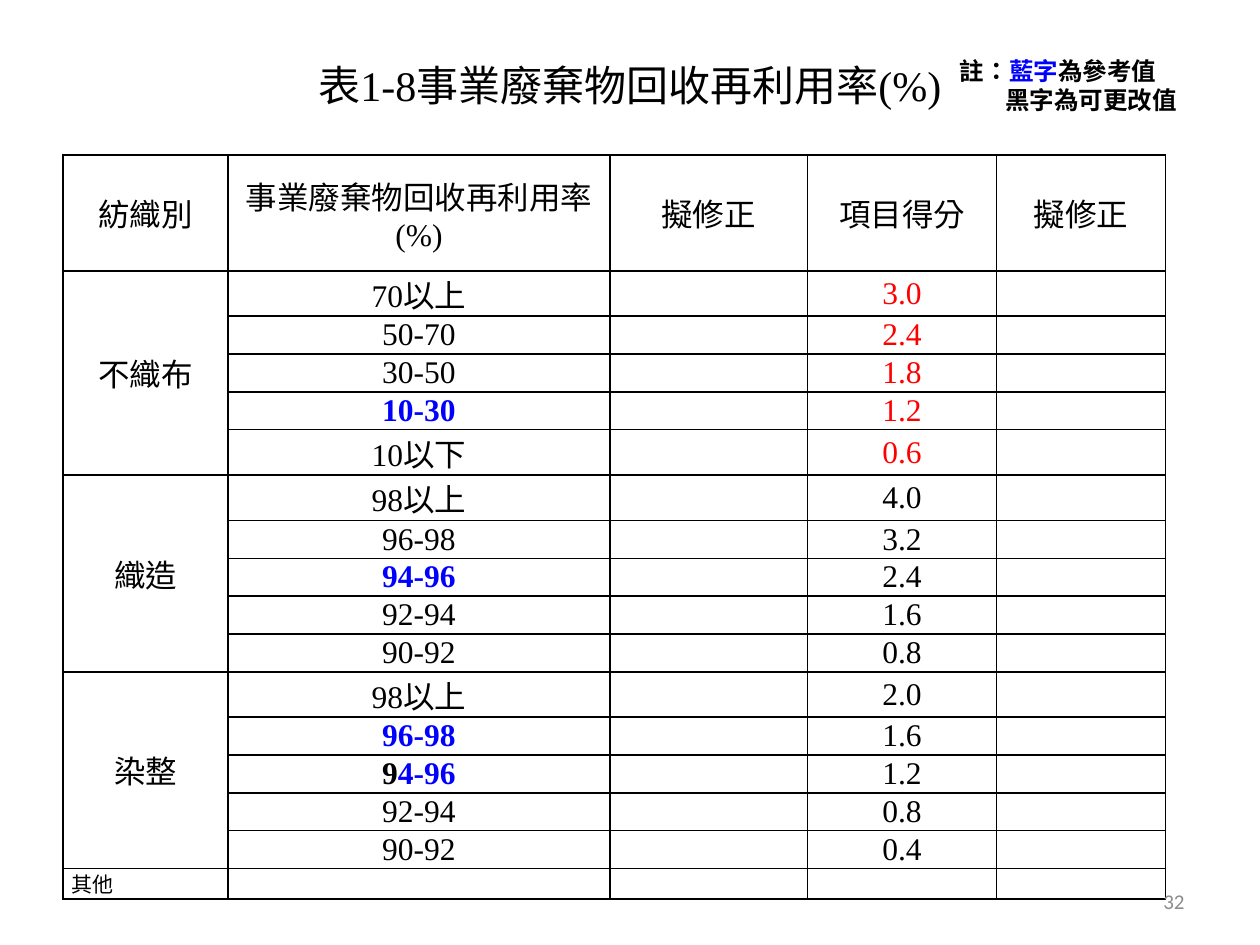
from lxml.etree import SubElement
from pptx import Presentation
from pptx.dml.color import RGBColor
from pptx.enum.text import MSO_ANCHOR as Anchor, PP_ALIGN as Align
from pptx.oxml.ns import qn
from pptx.util import Inches, Pt

BLACK = RGBColor(0, 0, 0)
BLUE = RGBColor(0, 0, 255)
RED = RGBColor(255, 0, 0)
GRAY = RGBColor(0x8C, 0x8C, 0x8C)
WHITE = RGBColor(255, 255, 255)
SERIF, SANS, CJK = "Times New Roman", "Calibri", "Noto Sans CJK TC"

COLUMN_WIDTHS = [1.31, 3.03, 1.57, 1.5, 1.34]
HEADER_HEIGHT, LABEL_HEIGHT, NUMBER_HEIGHT, OTHER_HEIGHT = 0.92, 0.36, 0.28, 0.24
HEADERS = ["紡織別", "事業廢棄物回收再利用率(%)", "擬修正", "項目得分", "擬修正"]
# Textile type, score colour, rates with their scores
GROUPS = [
    ("不織布", RED, [("70以上", "3.0"), ("50-70", "2.4"), ("30-50", "1.8"),
                  ("10-30", "1.2"), ("10以下", "0.6")]),
    ("織造", BLACK, [("98以上", "4.0"), ("96-98", "3.2"), ("94-96", "2.4"),
                   ("92-94", "1.6"), ("90-92", "0.8")]),
    ("染整", BLACK, [("98以上", "2.0"), ("96-98", "1.6"), ("94-96", "1.2"),
                   ("92-94", "0.8"), ("90-92", "0.4")]),
]
# Reference rates, shown bold: (group, position) -> coloured runs
REFERENCE_RATES = {
    (0, 3): [("10-30", BLUE)],
    (1, 2): [("94-96", BLUE)],
    (2, 1): [("96-98", BLUE)],
    (2, 2): [("9", BLACK), ("4-96", BLUE)],
}


def write(paragraph, runs, size, name=SERIF, bold=False, align=Align.CENTER):
    """Fill a paragraph with (text, colour) runs in one font."""
    paragraph.alignment = align
    font = paragraph.font
    font.size, font.name, font.bold = Pt(size), name, bold
    for text, color in runs:
        run = paragraph.add_run()
        run.text = text
        run.font.color.rgb = color
        properties = run.font._element
        properties.set("lang", "zh-TW")
        SubElement(properties, qn("a:ea"), typeface=CJK)


def add_text_frame(slide, box, anchor):
    frame = slide.shapes.add_textbox(*map(Inches, box)).text_frame
    frame.word_wrap = True
    frame.vertical_anchor = anchor
    return frame


def add_title(slide, box):
    frame = add_text_frame(slide, box, Anchor.MIDDLE)
    write(frame.paragraphs[0], [("表1-8事業廢棄物回收再利用率(%)", BLACK)], 24)


def add_page_number(slide, box):
    frame = add_text_frame(slide, box, Anchor.MIDDLE)
    write(frame.paragraphs[0], [("32", GRAY)], 12, SANS, align=Align.RIGHT)


def add_note(slide, box):
    frame = add_text_frame(slide, box, Anchor.TOP)
    lines = [
        [("註：", BLACK), ("藍字", BLUE), ("為參考值", BLACK)],
        [("黑字為可更改值", BLACK)],
    ]
    paragraphs = [frame.paragraphs[0], frame.add_paragraph()]
    for paragraph, runs in zip(paragraphs, lines):
        write(paragraph, runs, 14, SANS, bold=True, align=Align.LEFT)
        paragraph.line_spacing = Pt(16.5)
    paragraphs[1]._p.get_or_add_pPr().set("marL", str(Inches(0.36)))


def format_cell(cell):
    """Give an empty cell its margins, black borders and white fill."""
    cell.vertical_anchor = Anchor.MIDDLE
    cell.margin_left = cell.margin_right = Inches(0.07)
    cell.margin_top = cell.margin_bottom = 0
    properties = cell._tc.get_or_add_tcPr()
    for side in ("a:lnL", "a:lnR", "a:lnT", "a:lnB"):
        line = SubElement(properties, qn(side), w=str(Pt(1)))
        fill = SubElement(line, qn("a:solidFill"))
        SubElement(fill, qn("a:srgbClr"), val=str(BLACK))
    cell.fill.solid()
    cell.fill.fore_color.rgb = WHITE
    # Keep cells without text from stretching their row
    end = SubElement(cell.text_frame.paragraphs[0]._p, qn("a:endParaRPr"))
    end.set("sz", "1200")


def find_row_heights():
    """Rates with Chinese characters need taller rows than plain numbers."""
    rates = [rate for _, _, group_rates in GROUPS for rate, _ in group_rates]
    rate_heights = [NUMBER_HEIGHT if "-" in rate else LABEL_HEIGHT for rate in rates]
    return [HEADER_HEIGHT, *rate_heights, OTHER_HEIGHT]


def add_rate_table(slide, left, top):
    heights = find_row_heights()
    box = (left, top, sum(COLUMN_WIDTHS), sum(heights))
    table = slide.shapes.add_table(
        len(heights), len(COLUMN_WIDTHS), *map(Inches, box)).table
    table.first_row = table.horz_banding = False
    for column, width in zip(table.columns, COLUMN_WIDTHS):
        column.width = Inches(width)
    for row, height in zip(table.rows, heights):
        row.height = Inches(height)
        for cell in row.cells:
            format_cell(cell)

    def fill_cell(row, column, runs, size=18, **style):
        paragraph = table.cell(row, column).text_frame.paragraphs[0]
        write(paragraph, runs, size, **style)

    for column, header in enumerate(HEADERS):
        fill_cell(0, column, [(header, BLACK)])
    row = 1
    for group, (textile, score_color, rates) in enumerate(GROUPS):
        table.cell(row, 0).merge(table.cell(row + len(rates) - 1, 0))
        fill_cell(row, 0, [(textile, BLACK)])
        for position, (rate, score) in enumerate(rates):
            reference = REFERENCE_RATES.get((group, position))
            fill_cell(row, 1, reference or [(rate, BLACK)], bold=bool(reference))
            fill_cell(row, 3, [(score, score_color)])
            row += 1
    fill_cell(row, 0, [("其他", BLACK)], size=12, align=Align.LEFT)


def main():
    presentation = Presentation()
    presentation.slide_width, presentation.slide_height = Inches(10), Inches(7.5)
    slide = presentation.slides.add_slide(presentation.slide_layouts[6])
    add_title(slide, (0.75, 0.28, 8.5, 0.79))
    add_rate_table(slide, 0.5, 1.23)
    add_page_number(slide, (7.17, 6.95, 2.33, 0.4))
    add_note(slide, (7.52, 0.4, 1.98, 0.57))
    presentation.save("out.pptx")


if __name__ == "__main__":
    main()
